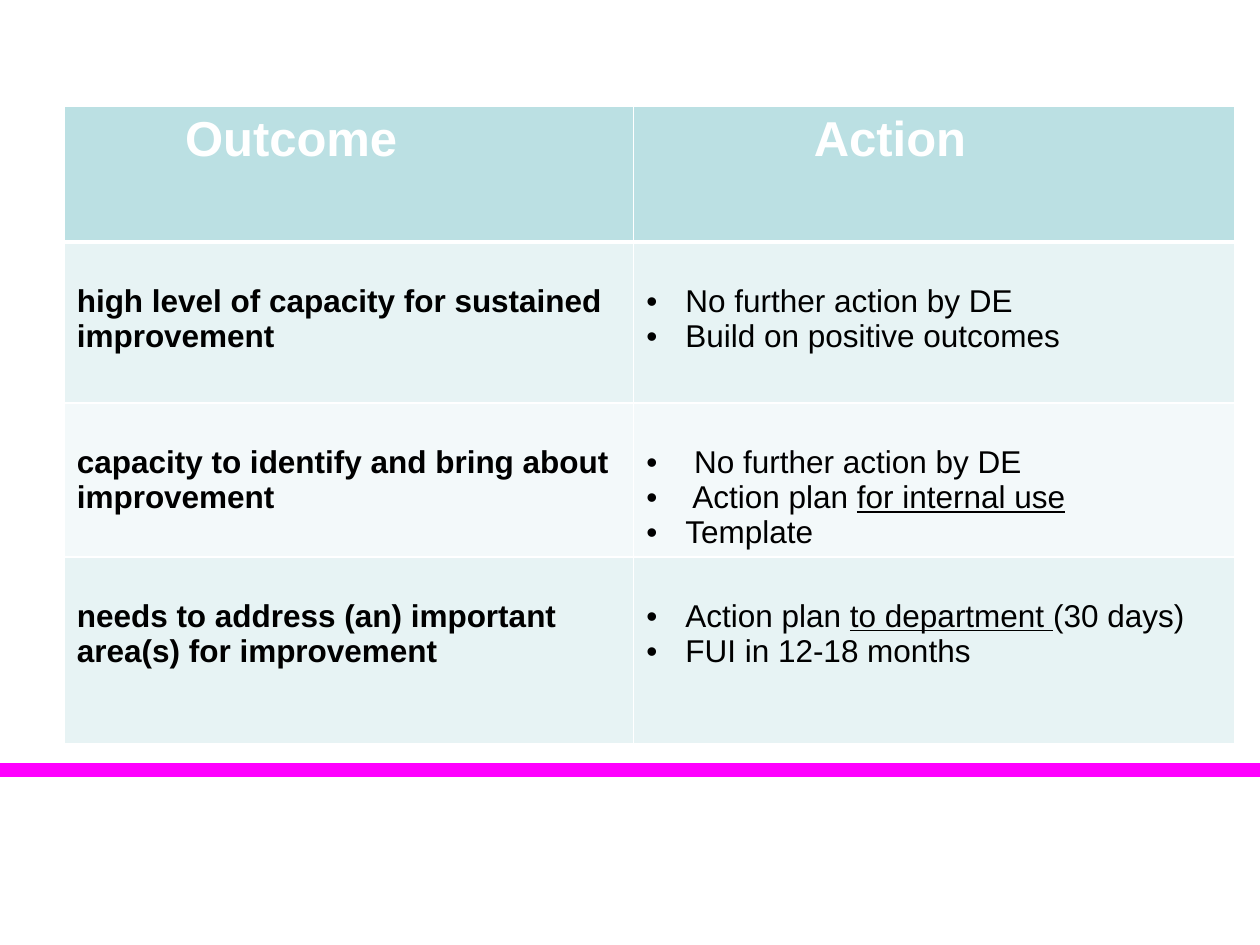
from lxml.etree import SubElement
from pptx import Presentation
from pptx.dml.color import RGBColor
from pptx.enum.shapes import MSO_CONNECTOR
from pptx.oxml.ns import qn
from pptx.util import Inches, Pt

COLUMN_WIDTHS = [4.52, 4.77]
ROW_HEIGHTS = [1.08, 1.28, 1.22, 1.48]
HEADINGS = [("Outcome", 0.96), ("Action", 1.43)]  # text, left margin

# Each action is a list of (text, underlined) runs.
OUTCOMES = [
    ("high level of capacity for sustained improvement",
     [[("No further action by DE", False)],
      [("Build on positive outcomes", False)]]),
    ("capacity to identify and bring about improvement",
     [[(" No further action by DE", False)],
      [(" Action plan ", False), ("for internal use", True)],
      [("Template", False)]]),
    ("needs to address (an) important area(s) for improvement",
     [[("Action plan ", False), ("to department ", True), ("(30 days)", False)],
      [("FUI in 12-18 months", False)]]),
]


def color(hex_value):
    return RGBColor.from_string(hex_value)


class SlideBuilder:
    font_name = "Arial"
    white, black, magenta = "FFFFFF", "000000", "FF00FF"
    header_fill = "BBE0E3"
    band_fills = ["E7F3F4", "F3F9FA"]
    body_top_margin = 0.33
    bullet_indent = 0.31

    def __init__(self, slide):
        self.slide = slide

    def add_line(self, left, right, y, hex_value, width):
        line = self.slide.shapes.add_connector(
            MSO_CONNECTOR.STRAIGHT, Inches(left), Inches(y), Inches(right), Inches(y))
        line.line.color.rgb = color(hex_value)
        line.line.width = Pt(width)
        SubElement(line._element.spPr, qn("a:effectLst"))

    def add_table(self, left, top, column_widths, row_heights):
        table = self.slide.shapes.add_table(
            len(row_heights), len(column_widths), Inches(left), Inches(top),
            Inches(sum(column_widths)), Inches(sum(row_heights))).table
        table.horz_banding = False
        for column, width in zip(table.columns, column_widths):
            column.width = Inches(width)
        for row, height in zip(table.rows, row_heights):
            row.height = Inches(height)
        return table

    def format_cell(self, cell, fill, top_border=1, bottom_border=1, **margins):
        properties = cell._tc.get_or_add_tcPr()
        borders = {"lnL": 1, "lnR": 1, "lnT": top_border, "lnB": bottom_border}
        for tag, width in borders.items():
            border = SubElement(properties, qn(f"a:{tag}"), w=str(Pt(width)))
            solid_fill = SubElement(border, qn("a:solidFill"))
            SubElement(solid_fill, qn("a:srgbClr"), val=self.white)
        cell.fill.solid()
        cell.fill.fore_color.rgb = color(fill)
        for name, margin in margins.items():
            setattr(cell, name, Inches(margin))

    def add_run(self, paragraph, text, hex_value, **font_format):
        run = paragraph.add_run()
        run.text = text
        for name, value in {"name": self.font_name, **font_format}.items():
            setattr(run.font, name, value)
        run.font.color.rgb = color(hex_value)

    def add_bullets(self, cell, items):
        for index, runs in enumerate(items):
            frame = cell.text_frame
            paragraph = frame.add_paragraph() if index else frame.paragraphs[0]
            properties = paragraph._p.get_or_add_pPr()
            indent = Inches(self.bullet_indent)
            properties.set("marL", str(indent))
            properties.set("indent", str(-indent))
            SubElement(properties, qn("a:buFont"), typeface=self.font_name)
            SubElement(properties, qn("a:buChar"), char="•")
            for text, underlined in runs:
                self.add_run(paragraph, text, self.black, size=Pt(18),
                             bold=False, underline=underlined)


def main():
    presentation = Presentation()
    presentation.slide_width = Inches(10)
    presentation.slide_height = Inches(7.5)
    slide = presentation.slides.add_slide(presentation.slide_layouts[6])
    builder = SlideBuilder(slide)

    builder.add_line(0, 10, 6.11, builder.magenta, 8)
    table = builder.add_table(0.51, 0.84, COLUMN_WIDTHS, ROW_HEIGHTS)

    for column, (heading, margin) in enumerate(HEADINGS):
        cell = table.cell(0, column)
        builder.format_cell(cell, builder.header_fill, bottom_border=3,
                            margin_left=margin)
        builder.add_run(cell.text_frame.paragraphs[0], heading, builder.white,
                        size=Pt(28), bold=True)

    for row, (outcome, actions) in enumerate(OUTCOMES, start=1):
        outcome_cell, action_cell = table.cell(row, 0), table.cell(row, 1)
        for cell in (outcome_cell, action_cell):
            builder.format_cell(cell, builder.band_fills[(row - 1) % 2],
                                top_border=3 if row == 1 else 1,
                                margin_top=builder.body_top_margin)
        builder.add_run(outcome_cell.text_frame.paragraphs[0], outcome,
                        builder.black, size=Pt(18), bold=True)
        builder.add_bullets(action_cell, actions)

    presentation.save("out.pptx")


if __name__ == "__main__":
    main()
